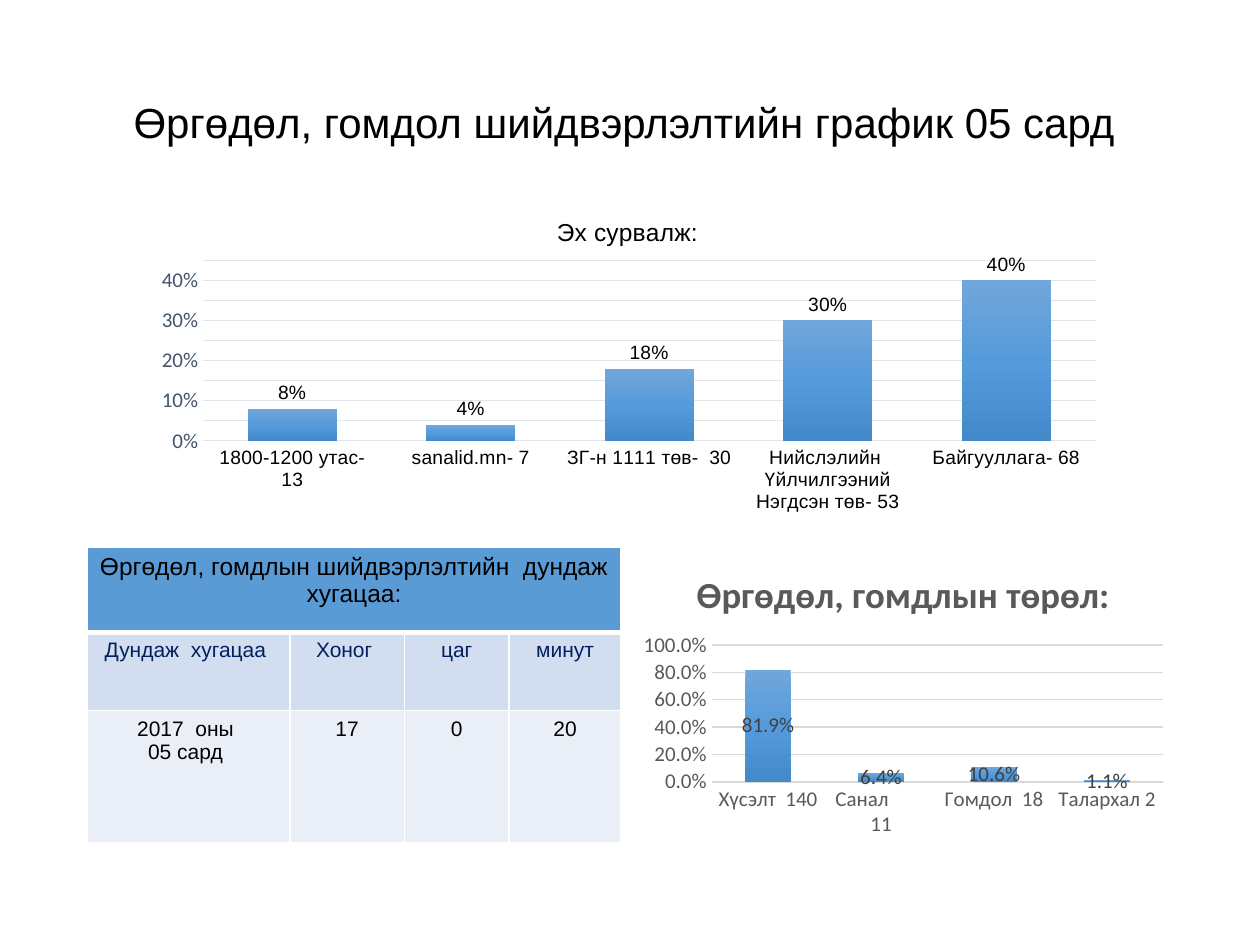
import copy

import pptx
import pptx.chart.data
import pptx.dml.color
import pptx.enum.chart
import pptx.enum.text
import pptx.oxml
import pptx.oxml.ns
import pptx.util
from pptx.util import Inches, Pt

qn = pptx.oxml.ns.qn
CENTER = pptx.enum.text.PP_ALIGN.CENTER
CHART_TYPE = pptx.enum.chart.XL_CHART_TYPE
NO_TICK = pptx.enum.chart.XL_TICK_MARK.NONE


def color(hex_string):
    return pptx.dml.color.RGBColor.from_string(hex_string)


def set_font(font, name, size, hex_string, bold=False):
    font.name, font.size, font.bold = name, Pt(size), bold
    font.color.rgb = color(hex_string)


def set_layout(parent, index, inner=False, **fractions):
    """Place a chart part by fractions of the chart area."""
    for old in parent.findall(qn("c:layout")):
        parent.remove(old)
    parts = '<c:layoutTarget val="inner"/>' if inner else ""
    parts += '<c:xMode val="edge"/><c:yMode val="edge"/>'
    parts += "".join(f'<c:{key} val="{value}"/>' for key, value in fractions.items())
    namespace = pptx.oxml.ns.nsdecls("c")
    parent.insert(index, pptx.oxml.parse_xml(
        f"<c:layout {namespace}><c:manualLayout>{parts}</c:manualLayout></c:layout>"))


def set_borders(cell, **widths):
    """Draw white borders; widths in points by side, in the order L, R, T, B."""
    namespace = pptx.oxml.ns.nsdecls("a")
    properties = cell._tc.get_or_add_tcPr()
    for index, (side, width) in enumerate(widths.items()):
        properties.insert(index, pptx.oxml.parse_xml(
            f'<a:ln{side} {namespace} w="{Pt(width)}"><a:solidFill>'
            f'<a:srgbClr val="FFFFFF"/></a:solidFill></a:ln{side}>'))


class ReportSlide:
    """Holds the report style and the page being filled."""

    BAR_GRADIENT = ((0, "71A6DB"), (0.5, "559BDB"), (1, "448ACA"))
    ROW_FILLS = ("5B9BD5", "D2DEEF", "EAEFF7")
    ROW_FONTS = ((14, "000000"), (12, "002060"), (12, "000000"))

    def __init__(self, deck):
        self.page = deck.slides.add_slide(deck.slide_layouts[6])

    def title(self, text, left, top, width, height):
        box = self.page.shapes.add_textbox(
            Inches(left), Inches(top), Inches(width), Inches(height))
        frame = box.text_frame
        frame.word_wrap = True
        frame.vertical_anchor = pptx.enum.text.MSO_ANCHOR.MIDDLE
        para = frame.paragraphs[0]
        para.text, para.alignment, para.line_spacing = text, CENTER, 0.9
        set_font(para.font, "Arial", 24, "000000")

    def table(self, rows, left, top, widths, heights):
        """Add a table whose first row is one merged heading."""
        table = self.page.shapes.add_table(
            len(heights), len(widths), Inches(left), Inches(top),
            Inches(sum(widths)), Inches(sum(heights))).table
        for column, width in zip(table.columns, widths):
            column.width = Inches(width)
        for row, height in zip(table.rows, heights):
            row.height = Inches(height)
        table.cell(0, 0).merge(table.cell(0, len(widths) - 1))
        for r, texts in enumerate(rows):
            for c in range(len(widths)):
                cell = table.cell(r, c)
                cell.fill.solid()
                cell.fill.fore_color.rgb = color(self.ROW_FILLS[r])
                set_borders(cell, L=1, R=1, T=3 if r == 1 else 1, B=3 if r == 0 else 1)
                if c < len(texts):
                    cell.text = texts[c]
                    for para in cell.text_frame.paragraphs:
                        para.alignment = CENTER
                        set_font(para.font, "Arial", *self.ROW_FONTS[r])

    def column_chart(self, kind, place, values, title, title_font, title_at, plot_at,
                     category_font, value_font, label_font, grid, axis_line,
                     number_format, top_value, step, gap, overlap, label_position=None):
        data = pptx.chart.data.CategoryChartData(number_format=number_format)
        data.categories = list(values)
        data.add_series("Series 1", list(values.values()))
        chart = self.page.shapes.add_chart(kind, *map(Inches, place), data).chart
        set_font(chart.font, "Calibri", 10, "000000")
        chart.has_legend = False

        chart.has_title = True
        para = chart.chart_title.text_frame.paragraphs[0]
        para.text = title
        set_font(para.font, *title_font)
        chart.chart_title.include_in_layout = False
        set_layout(chart.chart_title._element, 1, x=title_at[0], y=title_at[1])

        plot = chart.plots[0]
        set_layout(plot._element.getparent(), 0, inner=True, **dict(zip("xywh", plot_at)))
        plot.gap_width, plot.overlap, plot.vary_by_categories = gap, overlap, False
        plot.has_data_labels = True
        labels = plot.data_labels
        labels.show_value = True
        labels.number_format, labels.number_format_is_linked = number_format, False
        if label_position is not None:
            labels.position = label_position
        set_font(labels.font, *label_font)
        self.fill_bars(plot.series[0])

        for axis, font in ((chart.category_axis, category_font),
                           (chart.value_axis, value_font)):
            axis.major_tick_mark = axis.minor_tick_mark = NO_TICK
            set_font(axis.tick_labels.font, *font)
        chart.category_axis.has_major_gridlines = False
        lines = ((chart.category_axis.format.line, axis_line),
                 (chart.value_axis.major_gridlines.format.line, 0.75))
        for line, width in lines:
            line.color.rgb, line.width = color(grid), Pt(width)
        axis = chart.value_axis
        axis.format.line.fill.background()
        axis.minimum_scale, axis.maximum_scale, axis.major_unit = 0, top_value, step
        axis.tick_labels.number_format = number_format
        axis.tick_labels.number_format_is_linked = False

    def fill_bars(self, series):
        fill = series.format.fill
        fill.gradient()
        fill.gradient_angle = 270
        stops = series._element.find(".//" + qn("a:gsLst"))
        stops.append(copy.deepcopy(stops[0]))
        for stop, (position, hex_string) in zip(fill.gradient_stops, self.BAR_GRADIENT):
            stop.position, stop.color.rgb = position, color(hex_string)


def main():
    deck = pptx.Presentation()
    deck.slide_width, deck.slide_height = Inches(10), Inches(7.5)
    slide = ReportSlide(deck)
    slide.title("Өргөдөл, гомдол шийдвэрлэлтийн график 05 сард ", 0.69, 0.53, 8.62, 0.92)
    slide.table(
        [["Өргөдөл, гомдлын шийдвэрлэлтийн  дундаж хугацаа:"],
         ["Дундаж  хугацаа ", "Хоног ", "цаг", "минут"],
         ["2017  оны \n05 сард ", "17", "0", "20"]],
        0.69, 4.34, widths=(1.61, 0.91, 0.83, 0.89), heights=(0.68, 0.62, 1.05))
    slide.column_chart(
        CHART_TYPE.COLUMN_STACKED, (5.05, 4.34, 4.27, 2.36),
        {"Хүсэлт  140": 0.819, "Санал         11": 0.064,
         "Гомдол  18": 0.106, "Талархал 2": 0.011},
        "Өргөдөл, гомдлын төрөл:", ("Calibri", 21, "595959", True),
        title_at=(0.1, 0.05), plot_at=(0.14, 0.33, 0.84, 0.46),
        category_font=("Calibri", 12, "595959"), value_font=("Calibri", 12, "595959"),
        label_font=("Calibri", 12, "404040"), grid="D9D9D9", axis_line=1,
        number_format="0.0%", top_value=1, step=0.2, gap=150, overlap=100)
    slide.column_chart(
        CHART_TYPE.COLUMN_CLUSTERED, (1.15, 1.58, 7.7, 2.56),
        {"1800-1200 утас- 13": 0.08, "sanalid.mn- 7": 0.04, "ЗГ-н 1111 төв-  30": 0.18,
         "Нийслэлийн  Үйлчилгээний Нэгдсэн төв- 53": 0.3, "Байгууллага- 68": 0.4},
        "Эх сурвалж:", ("Arial", 14, "000000"),
        title_at=(0.42, 0.04), plot_at=(0.06, 0.19, 0.92, 0.56),
        category_font=("Arial", 11, "000000"), value_font=("Calibri", 12, "44546A"),
        label_font=("Arial", 11, "000000"), grid="E0E5EB", axis_line=0.75,
        number_format="0%", top_value=0.45, step=0.05, gap=100, overlap=-24,
        label_position=pptx.enum.chart.XL_LABEL_POSITION.OUTSIDE_END)
    deck.save("out.pptx")


if __name__ == "__main__":
    main()
